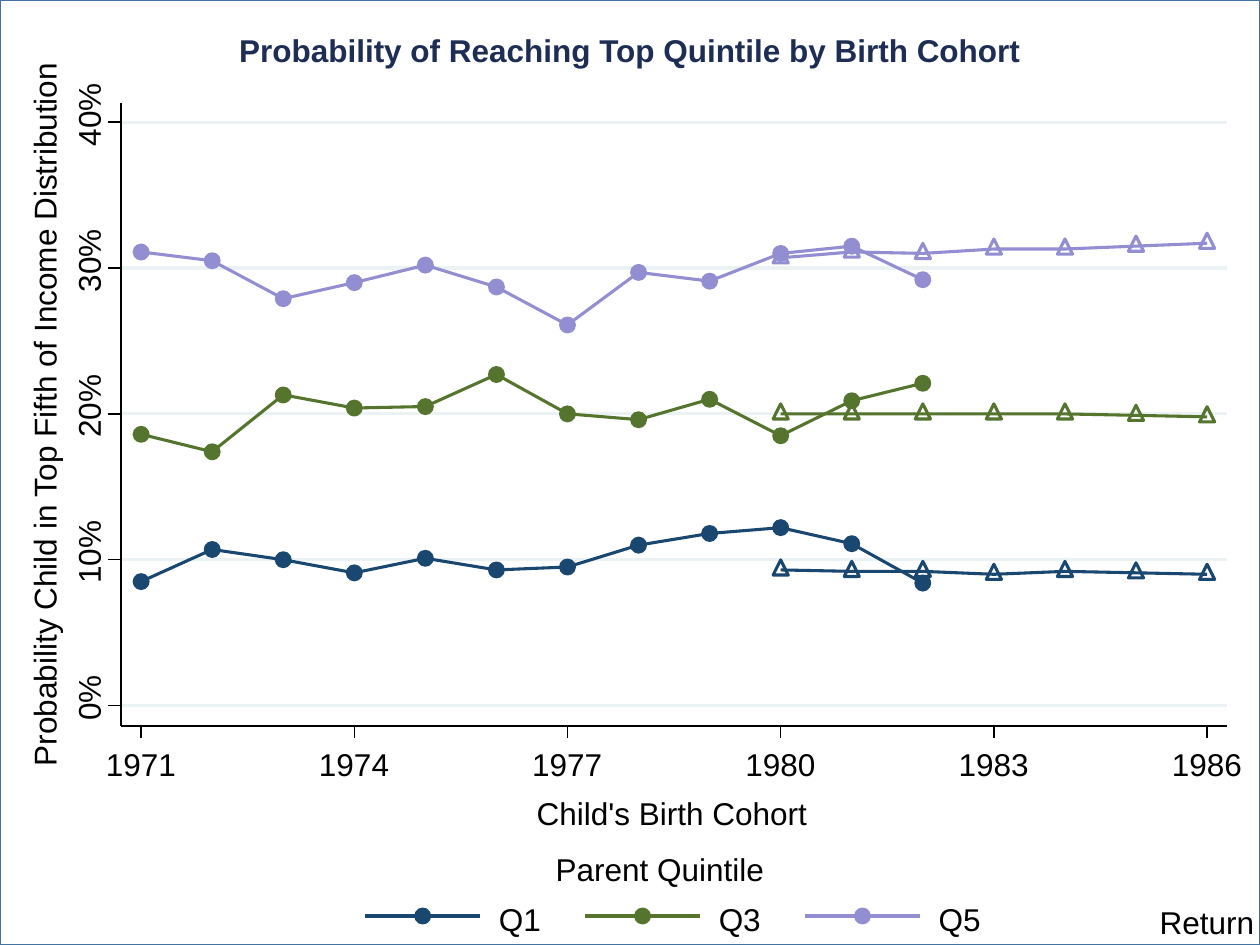
from lxml import etree
from pptx import Presentation
from pptx.dml.color import RGBColor
from pptx.enum import shapes, text
from pptx.oxml import ns
from pptx.util import Inches, Pt

# Content
TITLE = "Probability of Reaching Top Quintile by Birth Cohort"
X_TITLE = "Child's Birth Cohort"
Y_TITLE = "Probability Child in Top Fifth of Income Distribution"
LEGEND_TITLE = "Parent Quintile"
RETURN_LABEL = "Return"
YEAR_TICKS = range(1971, 1987, 3)
PERCENT_TICKS = range(0, 41, 10)
EARLY_START, LATE_START = 1971, 1980

WHITE = RGBColor(0xFF, 0xFF, 0xFF)
BLACK = RGBColor(0, 0, 0)
FRAME = RGBColor(0x43, 0x73, 0x9E)
GRID = RGBColor(0xEA, 0xF2, 0xF3)
NAVY = RGBColor(0x1E, 0x2D, 0x53)
BLUE = RGBColor(0x1A, 0x47, 0x6F)
GREEN = RGBColor(0x55, 0x75, 0x2F)
PURPLE = RGBColor(0x93, 0x8D, 0xD2)

# Quintile, colour, early cohorts (dots), late cohorts (triangles), in percent
QUINTILES = [
    ("Q1", BLUE,
     [8.5, 10.7, 10.0, 9.1, 10.1, 9.3, 9.5, 11.0, 11.8, 12.2, 11.1, 8.4],
     [9.3, 9.2, 9.2, 9.0, 9.2, 9.1, 9.0]),
    ("Q3", GREEN,
     [18.6, 17.4, 21.3, 20.4, 20.5, 22.7, 20.0, 19.6, 21.0, 18.5, 20.9, 22.1],
     [20.0, 20.0, 20.0, 20.0, 20.0, 19.9, 19.8]),
    ("Q5", PURPLE,
     [31.1, 30.5, 27.9, 29.0, 30.2, 28.7, 26.1, 29.7, 29.1, 31.0, 31.5, 29.2],
     [30.7, 31.1, 31.0, 31.3, 31.3, 31.5, 31.7]),
]

# Layout, in inches
SLIDE_W, SLIDE_H = 10, 7.5
LEFT, TOP, RIGHT, BOTTOM = 0.96, 0.82, 9.74, 5.76
FIRST_X, LAST_X = 1.12, 9.58
ZERO_Y, FORTY_Y = 5.6, 0.97
TICK, DOT = 0.1, 0.11
THICK, THIN = 1.75, 0.88
LEGEND_X, LEGEND_Y, LEGEND_STEP, KEY_W = 2.9, 7.27, 1.745, 0.91

prs = Presentation()
prs.slide_width, prs.slide_height = Inches(SLIDE_W), Inches(SLIDE_H)
slide = prs.slides.add_slide(prs.slide_layouts[6])
canvas = slide.shapes


def year_x(year):
    return FIRST_X + (year - 1971) * (LAST_X - FIRST_X) / 15


def percent_y(percent):
    return ZERO_Y - percent * (ZERO_Y - FORTY_Y) / 40


def paint(shape, fill, line, weight):
    shape.shadow.inherit = False
    if fill is None:
        shape.fill.background()
    else:
        shape.fill.solid()
        shape.fill.fore_color.rgb = fill
    shape.line.color.rgb = line
    shape.line.width = Pt(weight)


def add_preset(kind, left, top, width, height, fill, line, weight):
    box = map(Inches, (left, top, width, height))
    paint(canvas.add_shape(kind, *box), fill, line, weight)


def add_line(x1, y1, x2, y2, color, weight):
    line = canvas.add_connector(shapes.MSO_CONNECTOR.STRAIGHT,
                                *map(Inches, (x1, y1, x2, y2)))
    line.line.color.rgb = color
    line.line.width = Pt(weight)
    etree.SubElement(line._element.spPr, ns.qn("a:effectLst"))


def add_path(points, color, close=False):
    start, *rest = [(Inches(x), Inches(y)) for x, y in points]
    builder = canvas.build_freeform(*start)
    builder.add_line_segments(rest, close=close)
    paint(builder.convert_to_shape(), None, color, THICK)


def add_dot(x, y, color):
    add_preset(shapes.MSO_SHAPE.OVAL, x - DOT / 2, y - DOT / 2, DOT, DOT,
               color, color, THICK)


def add_triangle(x, y, color):
    add_path([(x, y - 0.08), (x - 0.06, y + 0.04), (x + 0.06, y + 0.04)],
             color, close=True)


def add_text(words, left, top, width, height=0.3, color=BLACK, bold=False,
             centered=False, wrap=False, rotation=0):
    box = canvas.add_textbox(*map(Inches, (left, top, width, height)))
    box.rotation = rotation
    frame = box.text_frame
    frame.margin_left = frame.margin_right = 0
    frame.margin_top = frame.margin_bottom = 0
    frame.word_wrap = wrap
    frame.auto_size = text.MSO_AUTO_SIZE.SHAPE_TO_FIT_TEXT
    paragraph = frame.paragraphs[0]
    if centered:
        paragraph.alignment = text.PP_ALIGN.CENTER
    run = paragraph.add_run()
    run.text = words
    run.font.name, run.font.size = "Arial", Pt(18)
    run.font.bold, run.font.color.rgb = bold, color


def add_series(first_year, values, color, add_marker):
    points = [(year_x(first_year + i), percent_y(value))
              for i, value in enumerate(values)]
    add_path(points, color)
    for x, y in points:
        add_marker(x, y, color)


# Frame, plot area and gridlines
add_preset(shapes.MSO_SHAPE.RECTANGLE, 0, 0, SLIDE_W, SLIDE_H, WHITE, FRAME, 1)
add_preset(shapes.MSO_SHAPE.RECTANGLE, LEFT, TOP, RIGHT - LEFT, BOTTOM - TOP,
           WHITE, WHITE, THIN)
for percent in PERCENT_TICKS:
    add_line(LEFT, percent_y(percent), RIGHT, percent_y(percent), GRID, THICK)

# Series
for _, color, early, _ in QUINTILES:
    add_series(EARLY_START, early, color, add_dot)
for _, color, _, late in QUINTILES:
    add_series(LATE_START, late, color, add_triangle)

# Percent axis, with label boxes a little wider than their text
add_line(LEFT, BOTTOM, LEFT, TOP, BLACK, THIN)
for percent in PERCENT_TICKS:
    y = percent_y(percent)
    add_line(LEFT, y, LEFT - TICK, y, BLACK, THIN)
    add_text(f"{percent}%", 0.4, y - 0.21, 0.6, centered=True, rotation=270)
add_text(Y_TITLE, -2.55, 3.14, 5.8, centered=True, rotation=270)

# Year axis
add_line(LEFT, BOTTOM, RIGHT, BOTTOM, BLACK, THIN)
for year in YEAR_TICKS:
    x = year_x(year)
    add_line(x, BOTTOM, x, BOTTOM + TICK, BLACK, THIN)
    add_text(str(year), x - 0.28, 5.91, 0.7, 0.36)
add_text(X_TITLE, 4.26, 6.3, 2.39, 0.36)

# Titles
add_text(LEGEND_TITLE, 4.41, 6.75, 1.67)
add_text(TITLE, 0, 0.25, SLIDE_W, color=NAVY, bold=True, centered=True, wrap=True)

# Legend
for i, (quintile, color, _, _) in enumerate(QUINTILES):
    x = LEGEND_X + i * LEGEND_STEP
    add_line(x, LEGEND_Y, x + KEY_W, LEGEND_Y, color, THICK)
    add_dot(x + KEY_W / 2, LEGEND_Y, color)
    add_text(quintile, x + 1.06, 7.14, 0.34)

add_text(RETURN_LABEL, 9.16, 7.17, 0.84, centered=True, wrap=True)

prs.save("out.pptx")
